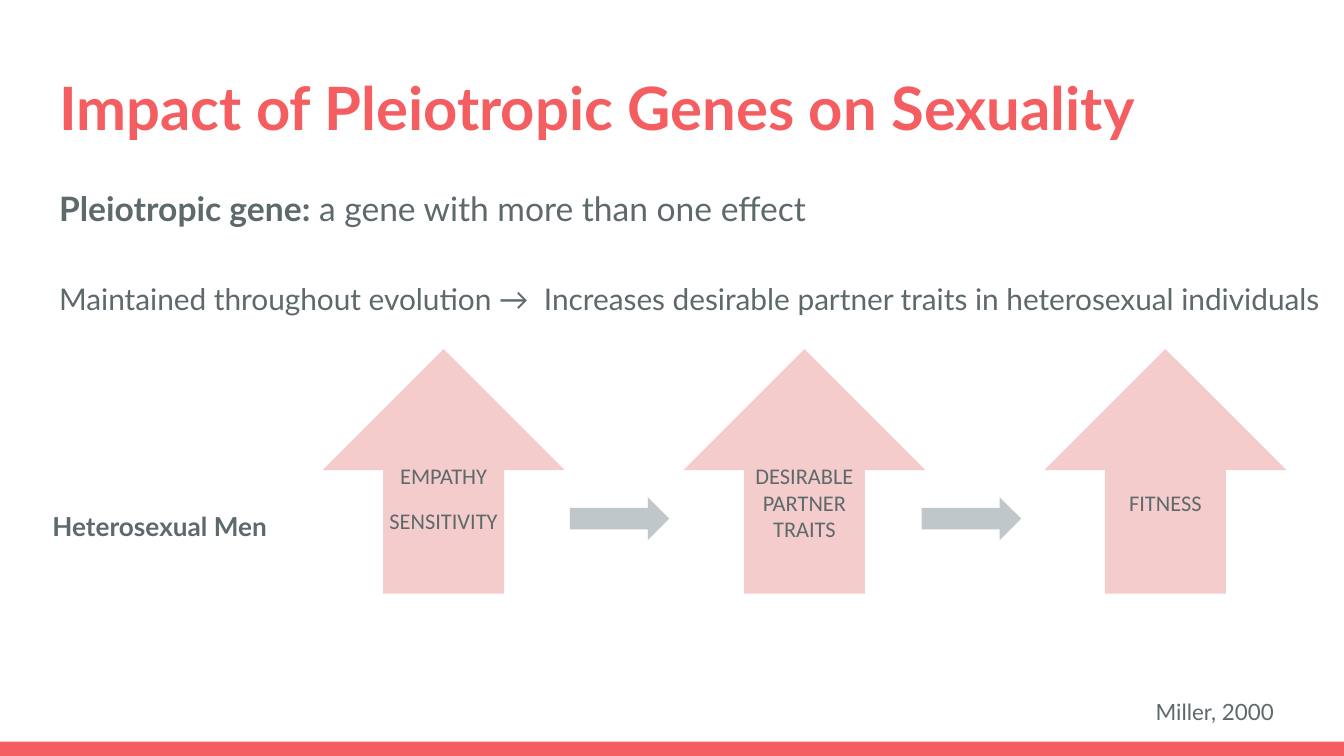
from pptx import Presentation
from pptx.dml.color import RGBColor
from pptx.enum.shapes import MSO_SHAPE
from pptx.enum.text import MSO_ANCHOR, PP_ALIGN
from pptx.util import Cm, Pt

RECTANGLE = MSO_SHAPE.RECTANGLE
UP_ARROW = MSO_SHAPE.UP_ARROW
RIGHT_ARROW = MSO_SHAPE.RIGHT_ARROW
MIDDLE = MSO_ANCHOR.MIDDLE
CENTER = PP_ALIGN.CENTER

CORAL = RGBColor(0xF5, 0x5E, 0x61)
PINK = RGBColor(0xF4, 0xCC, 0xCC)
SLATE = RGBColor(0x5E, 0x69, 0x6C)
SILVER = RGBColor(0xBF, 0xC7, 0xCA)

STAGES = [
    [("EMPATHY", 1.88, 1.98), ("SENSITIVITY", 2.74, 1.48)],
    [("DESIRABLE\nPARTNER\nTRAITS", 1.88, 1.98)],
    [("FITNESS", 2.4, 1.48)],
]


def add_filled_shape(slide, kind, left, top, width, height, color):
    shape = slide.shapes.add_shape(kind, Cm(left), Cm(top), Cm(width), Cm(height))
    shape.shadow.inherit = False
    shape.fill.solid()
    shape.fill.fore_color.rgb = color
    shape.line.fill.background()


def format_run(run, size, font="Lato", color=SLATE, bold=False):
    run.font.name = font
    run.font.size = Pt(size)
    run.font.bold = bold
    run.font.color.rgb = color


def add_text_box(slide, left, top, width, height):
    box = slide.shapes.add_textbox(Cm(left), Cm(top), Cm(width), Cm(height))
    text_frame = box.text_frame
    text_frame.word_wrap = True
    text_frame.margin_left = text_frame.margin_right = Cm(0.25)
    text_frame.margin_top = text_frame.margin_bottom = Cm(0.25)
    return text_frame


def add_text(slide, text, left, top, width, height, size, alignment=None, **style):
    text_frame = add_text_box(slide, left, top, width, height)
    text_frame.text = text
    for paragraph in text_frame.paragraphs:
        paragraph.alignment = alignment
        for run in paragraph.runs:
            format_run(run, size, **style)


def add_definition(slide, left, top, width, height):
    text_frame = add_text_box(slide, left, top, width, height)
    text_frame.vertical_anchor = MIDDLE
    definition = text_frame.paragraphs[0]
    for text, bold in [("Pleiotropic gene:", True),
                       (" a gene with more than one effect", False)]:
        run = definition.add_run()
        run.text = text
        format_run(run, 18, bold=bold)
    effect = text_frame.add_paragraph()
    effect.text = ("Maintained throughout evolution →  Increases desirable "
                   "partner traits in heterosexual individuals")
    effect.space_before = Pt(25)
    format_run(effect.runs[0], 16)
    for paragraph in text_frame.paragraphs:
        paragraph.line_spacing = 1.15


def add_trait_chain(slide, left, top, width, height):
    arrow_width = 4.57
    pitch = (width - arrow_width) / (len(STAGES) - 1)
    label_width = 2.67
    for index, labels in enumerate(STAGES):
        arrow_left = left + index * pitch
        add_filled_shape(slide, UP_ARROW, arrow_left, top, arrow_width, height, PINK)
        label_left = arrow_left + (arrow_width - label_width) / 2
        for text, offset, label_height in labels:
            add_text(slide, text, label_left, top + offset, label_width,
                     label_height, 12, alignment=CENTER, font="Calibri")
    for index in range(len(STAGES) - 1):
        add_filled_shape(slide, RIGHT_ARROW, left + 4.67 + index * 6.65,
                         top + 2.8, 1.88, 0.81, SILVER)


def main():
    presentation = Presentation()
    presentation.slide_width = Cm(25.4)
    presentation.slide_height = Cm(14.29)
    slide = presentation.slides.add_slide(presentation.slide_layouts[6])
    add_filled_shape(slide, RECTANGLE, 0, 14.02, 25.4, 0.27, CORAL)
    add_text(slide, "Impact of Pleiotropic Genes on Sexuality",
             0.87, 1.09, 23.67, 1.73, 32, color=CORAL, bold=True)
    add_definition(slide, 0.87, 3.61, 24.89, 2.21)
    add_text(slide, "Heterosexual Men", 0.74, 9.4, 5.26, 1.98, 14, bold=True)
    add_trait_chain(slide, 6.1, 6.6, 18.21, 4.62)
    add_text(slide, "Miller, 2000", 21.59, 12.95, 2.95, 0.81, 12)
    presentation.save("out.pptx")


if __name__ == "__main__":
    main()
